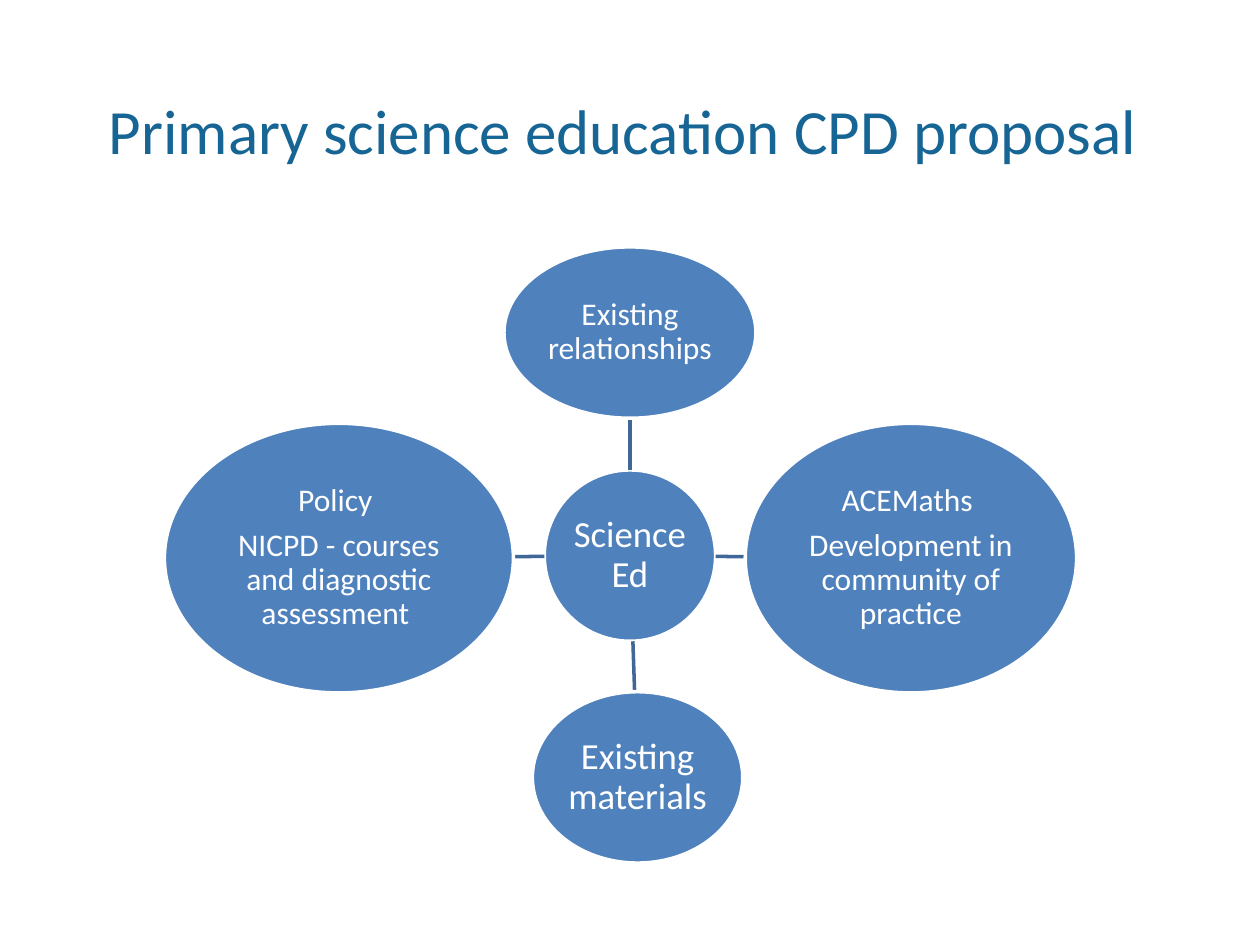
import dataclasses
import math

import pptx
import pptx.dml.color
import pptx.enum.shapes
import pptx.enum.text
import pptx.oxml.ns
import pptx.util
from lxml import etree


@dataclasses.dataclass(frozen=True)
class Theme:
    """Colours, font and sizes of the slide."""
    font: str = "Calibri"
    title_color: str = "166594"
    node_color: str = "4F81BD"
    link_color: str = "3F6797"
    white: str = "FFFFFF"
    title_size: int = 36
    large: int = 21
    small: int = 18
    line_width: int = 2


@dataclasses.dataclass(frozen=True)
class Node:
    """An ellipse given by its centre and size in grid units."""
    column: float
    row: float
    width: float
    height: float
    lines: tuple
    size: int


THEME = Theme()
COLUMNS, ROWS = 100, 75
SLIDE_WIDTH, SLIDE_HEIGHT = pptx.util.Inches(10), pptx.util.Inches(7.5)

HUB = Node(50, 44.1, 13.6, 13.6, ("Science Ed",), THEME.large)
SATELLITES = (
    Node(50, 26.4, 20, 13.6, ("Existing relationships",), THEME.small),
    Node(72.3, 44.3, 26.3, 21.4,
         ("ACEMaths ", "Development in community of practice"), THEME.small),
    Node(50.6, 61.7, 16.7, 13.6, ("Existing materials",), THEME.large),
    Node(26.9, 44.3, 27.7, 21.4,
         ("Policy ", "NICPD - courses and diagnostic assessment "), THEME.small),
)


def across(columns):
    """Turn grid columns into a length."""
    return round(SLIDE_WIDTH * columns / COLUMNS)


def down(rows):
    """Turn grid rows into a length."""
    return round(SLIDE_HEIGHT * rows / ROWS)


def rgb(value):
    """Turn a hex string into a colour."""
    return pptx.dml.color.RGBColor.from_string(value)


def write_text(frame, lines, *, size, color, spacing=1.0, gap=0, inset=None):
    """Fill a text frame with centred paragraphs."""
    frame.word_wrap = True
    frame.vertical_anchor = pptx.enum.text.MSO_ANCHOR.MIDDLE
    if inset is not None:
        frame.margin_left = frame.margin_right = inset
        frame.margin_top = frame.margin_bottom = inset
    for index, line in enumerate(lines):
        para = frame.add_paragraph() if index else frame.paragraphs[0]
        para.alignment = pptx.enum.text.PP_ALIGN.CENTER
        para.line_spacing = spacing
        if index < len(lines) - 1:
            para.space_after = pptx.util.Pt(gap)
        span = para.add_run()
        span.text = line
        span.font.name = THEME.font
        span.font.size = pptx.util.Pt(size)
        span.font.color.rgb = rgb(color)


def add_title(page, text):
    """Add the slide heading."""
    box = page.shapes.add_textbox(across(5), down(4), across(90), down(12.5))
    write_text(box.text_frame, (text,), size=THEME.title_size,
               color=THEME.title_color)


def add_node(page, node):
    """Add a labelled ellipse."""
    ellipse = page.shapes.add_shape(
        pptx.enum.shapes.MSO_SHAPE.OVAL,
        across(node.column - node.width / 2), down(node.row - node.height / 2),
        across(node.width), down(node.height))
    ellipse.shadow.inherit = False
    ellipse.fill.solid()
    ellipse.fill.fore_color.rgb = rgb(THEME.node_color)
    ellipse.line.color.rgb = rgb(THEME.white)
    ellipse.line.width = pptx.util.Pt(THEME.line_width)
    write_text(ellipse.text_frame, node.lines, size=node.size, color=THEME.white,
               spacing=0.9, gap=node.size * 0.35, inset=pptx.util.Inches(0.01))


def edge_point(node, other):
    """Find where the line towards another node leaves this ellipse."""
    run, rise = other.column - node.column, other.row - node.row
    share = 1 / math.hypot(2 * run / node.width, 2 * rise / node.height)
    return across(node.column + share * run), down(node.row + share * rise)


def add_link(page, start, end):
    """Join the edges of two nodes with a straight line."""
    link = page.shapes.add_connector(
        pptx.enum.shapes.MSO_CONNECTOR.STRAIGHT,
        *edge_point(start, end), *edge_point(end, start))
    link.line.color.rgb = rgb(THEME.link_color)
    link.line.width = pptx.util.Pt(THEME.line_width)
    properties = link._element.spPr
    etree.SubElement(properties, pptx.oxml.ns.qn("a:effectLst"))


def main():
    """Build and save the slide."""
    deck = pptx.Presentation()
    deck.slide_width, deck.slide_height = SLIDE_WIDTH, SLIDE_HEIGHT
    page = deck.slides.add_slide(deck.slide_layouts[6])
    add_title(page, "Primary science education CPD proposal ")
    add_node(page, HUB)
    for satellite in SATELLITES:
        add_link(page, HUB, satellite)
        add_node(page, satellite)
    deck.save("out.pptx")


if __name__ == "__main__":
    main()
